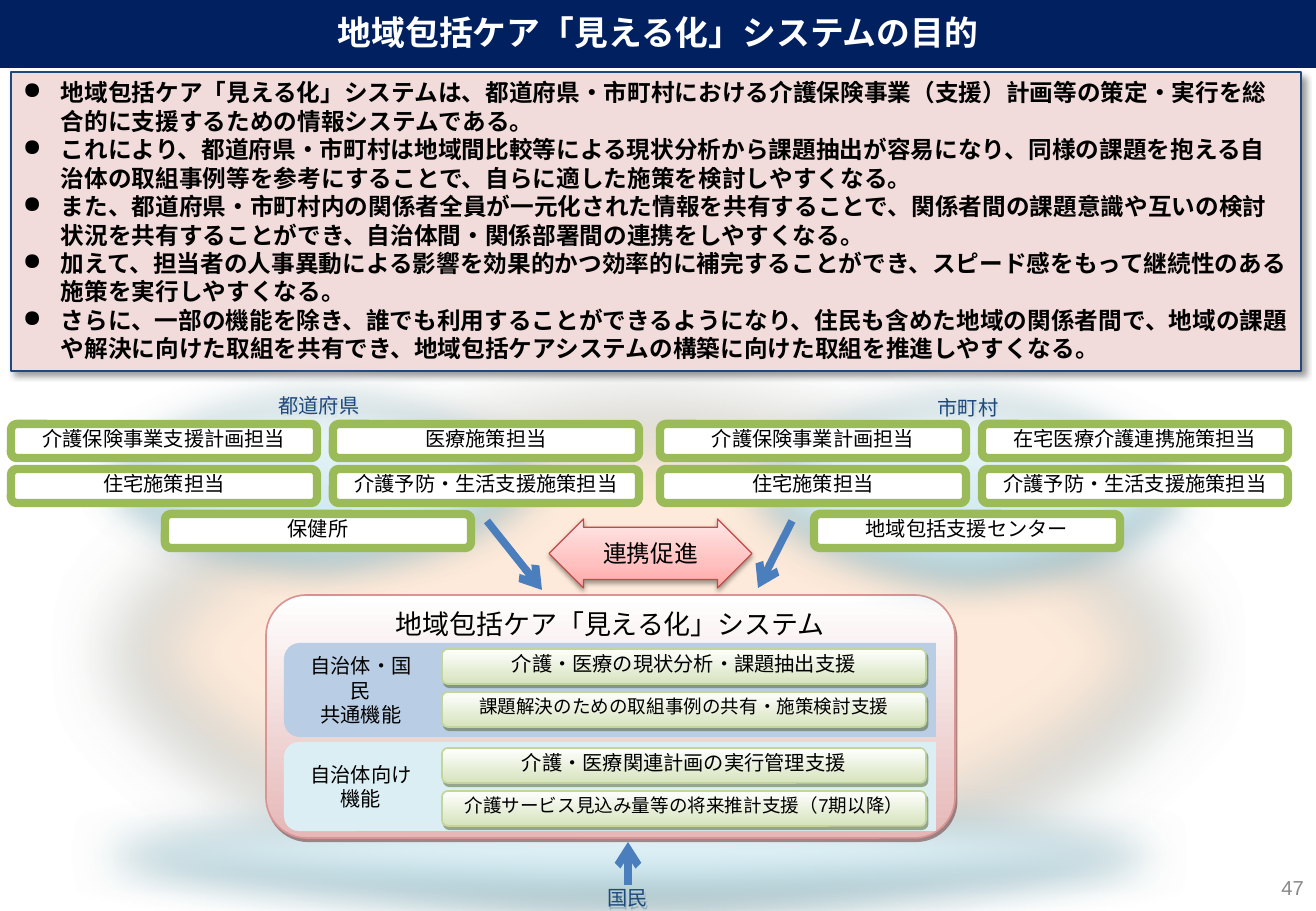
from copy import deepcopy
from lxml import etree
from pptx import Presentation
from pptx import util as u
from pptx.dml.color import RGBColor
from pptx.enum import shapes, text
from pptx.oxml.ns import qn

# Content
TITLE = "地域包括ケア「見える化」システムの目的"
SUMMARY = [
    "地域包括ケア「見える化」システムは、都道府県・市町村における介護保険事業（支援）計画等の策定・実行を総合的に支援するための情報システムである。",
    "これにより、都道府県・市町村は地域間比較等による現状分析から課題抽出が容易になり、同様の課題を抱える自治体の取組事例等を参考にすることで、自らに適した施策を検討しやすくなる。",
    "また、都道府県・市町村内の関係者全員が一元化された情報を共有することで、関係者間の課題意識や互いの検討状況を共有することができ、自治体間・関係部署間の連携をしやすくなる。",
    "加えて、担当者の人事異動による影響を効果的かつ効率的に補完することができ、スピード感をもって継続性のある施策を実行しやすくなる。",
    "さらに、一部の機能を除き、誰でも利用することができるようになり、住民も含めた地域の関係者間で、地域の課題や解決に向けた取組を共有でき、地域包括ケアシステムの構築に向けた取組を推進しやすくなる。",
]
SYSTEM = "地域包括ケア「見える化」システム"
COOPERATION = "連携促進"
CITIZENS = "国民"
PAGE = "47"
# name, left and height of the ellipse, left of the grid, offices row by row
GOVERNMENTS = [
    ("都道府県", 56, 245, 11,
     ["介護保険事業支援計画担当", "医療施策担当", "住宅施策担当",
      "介護予防・生活支援施策担当", "保健所"]),
    ("市町村", 705, 260, 660,
     ["介護保険事業計画担当", "在宅医療介護連携施策担当", "住宅施策担当",
      "介護予防・生活支援施策担当", "地域包括支援センター"]),
]
BLUE = RGBColor(0xB9, 0xCD, 0xE5)
AQUA = RGBColor(0xDB, 0xEE, 0xF4)
# label lines, top, height, colour, functions
FUNCTION_GROUPS = [
    (["自治体・国民", "共通機能"], 643, 94, BLUE,
     [("介護・医療の現状分析・課題抽出支援", 12),
      ("課題解決のための取組事例の共有・施策検討支援", 11)]),
    (["自治体向け", "機能"], 742, 89, AQUA,
     [("介護・医療関連計画の実行管理支援", 12),
      ("介護サービス見込み量等の将来推計支援（7期以降）", 11)]),
]
ARROWS = [(487, 521, 542, 590), (792, 521, 758, 588), (628, 885, 628, 842)]

# Colours, fonts and formats
WHITE = RGBColor(0xFF, 0xFF, 0xFF)
BLACK = RGBColor(0, 0, 0)
GREY = RGBColor(0x89, 0x89, 0x89)
NAVY = RGBColor(0x00, 0x20, 0x60)
INK = RGBColor(0x1F, 0x49, 0x7D)
PINK = RGBColor(0xF2, 0xDC, 0xDB)
PEACH = RGBColor(0xFD, 0xEA, 0xDA)
SKY = RGBColor(0xB6, 0xDD, 0xE8)
SKY_LINE = RGBColor(0x92, 0xCD, 0xDC)
ROSE = RGBColor(0xE5, 0xB8, 0xB7)
ROSE_LINE = RGBColor(0xD9, 0x95, 0x94)
LEAF = RGBColor(0xD6, 0xE3, 0xBC)
LEAF_LINE = RGBColor(0xC2, 0xD6, 0x9B)
GREEN = RGBColor(0x9B, 0xBB, 0x59)
ARROW = RGBColor(0x4B, 0x7E, 0xBC)
RED_LINE = RGBColor(0xBF, 0x4C, 0x48)
RED_STOPS = [(0, RGBColor(0xFF, 0xA6, 0xA5)), (0.35, RGBColor(0xFF, 0xC0, 0xBF)),
             (1, RGBColor(0xFF, 0xE7, 0xE7))]
JP = "Noto Sans CJK JP"
SMALL = (10, 1)
WIDE = (12, 6)
S, A, V = shapes.MSO_SHAPE, text.PP_ALIGN, text.MSO_ANCHOR


def fade(color):
    return [(0, WHITE), (1, color)]


def drop(color):
    return (color, 50, 0, 2.2, 63)


CLOUD = dict(line=(SKY_LINE, 1), shadow=drop("205867"))
CLOUD_TEXT = dict(size=12, color=INK, ins=SMALL)

PX = 914400 / 121.5
prs = Presentation()
prs.slide_width, prs.slide_height = round(1316 * PX), round(911 * PX)
slide = prs.slides.add_slide(prs.slide_layouts[6])


def emu(*lengths):
    return [round(n * PX) for n in lengths]


def add_effects(spPr, shadow, soft):
    effects = spPr.find(qn("a:effectLst"))
    if shadow:
        color, alpha, blur, dist, angle = shadow
        outer = etree.SubElement(effects, qn("a:outerShdw"), blurRad=str(u.Pt(blur)),
                                 dist=str(u.Pt(dist)), dir=str(angle * 60000),
                                 algn="ctr", rotWithShape="0")
        clr = etree.SubElement(outer, qn("a:srgbClr"), val=color)
        etree.SubElement(clr, qn("a:alpha"), val=str(alpha * 1000))
    if soft:
        etree.SubElement(effects, qn("a:softEdge"), rad=str(u.Pt(soft)))


def add_box(kind, at, fill, line=None, shadow=None, soft=0, adj=(), angle=270):
    sp = slide.shapes.add_shape(kind, *emu(*at))
    sp.shadow.inherit = False
    for i, value in enumerate(adj):
        sp.adjustments[i] = value
    if isinstance(fill, list):
        sp.fill.gradient()
        sp.fill.gradient_angle = angle
        stops = sp._element.spPr.find(".//" + qn("a:gsLst"))
        for _ in fill[2:]:
            stops.append(deepcopy(stops[0]))
        for stop, (position, color) in zip(sp.fill.gradient_stops, fill):
            stop.position, stop.color.rgb = position, color
    else:
        sp.fill.solid()
        sp.fill.fore_color.rgb = fill
    if line:
        sp.line.color.rgb, sp.line.width = line[0], u.Pt(line[1])
    else:
        sp.line.fill.background()
    add_effects(sp._element.spPr, shadow, soft)
    return sp


def write(sp, lines, size, color=BLACK, font=JP, bold=False, align=A.CENTER,
          anchor=V.TOP, ins=WIDE, bullet=None):
    tf = sp.text_frame
    dx, dy = emu(*ins)
    frame = dict(word_wrap=True, vertical_anchor=anchor, margin_left=dx,
                 margin_right=dx, margin_top=dy, margin_bottom=dy)
    for name, value in frame.items():
        setattr(tf, name, value)
    for i, line in enumerate(lines):
        p = tf.add_paragraph() if i else tf.paragraphs[0]
        p.alignment, p.line_spacing = align, u.Pt(round(size * 1.205, 2))
        r = p.add_run()
        r.text = line
        for name, value in dict(size=u.Pt(size), name=font, bold=bold).items():
            setattr(r.font, name, value)
        r.font.color.rgb = color
        r.font._element.find(qn("a:latin")).addnext(
            r.font._element.makeelement(qn("a:ea"), {"typeface": JP}))
        if bullet:
            pPr = p._p.get_or_add_pPr()
            indent = emu(38)[0]
            pPr.set("marL", str(indent))
            pPr.set("indent", str(-indent))
            etree.SubElement(pPr, qn("a:buChar"), char=bullet)


# Soft background and citizens
add_box(S.OVAL, (18, 332, 1260, 638), PEACH, soft=50, **CLOUD)
sp = add_box(S.OVAL, (-15, 767, 1285, 168), fade(SKY), soft=25, **CLOUD)
write(sp, [CITIZENS], anchor=V.BOTTOM, **CLOUD_TEXT)

# Title and summary
sp = add_box(S.RECTANGLE, (0, -4, 1316, 72), NAVY)
write(sp, [TITLE], 20, WHITE, bold=True, anchor=V.MIDDLE)
sp = add_box(S.RECTANGLE, (11, 72, 1290, 299), PINK, (INK, 0.75), ("000000", 40, 4, 3, 45))
write(sp, SUMMARY, 14, bold=True, align=A.LEFT, bullet="●")

# System and its functions
sp = add_box(S.ROUNDED_RECTANGLE, (266, 595, 689, 243), fade(ROSE), (ROSE_LINE, 1),
             drop("622423"), adj=[0.167])
write(sp, [SYSTEM], 16, font="Arial", ins=SMALL)
for label, top, height, color, functions in FUNCTION_GROUPS:
    add_box(S.RECTANGLE, (424, top, 512, height), color)
    sp = add_box(S.ROUNDED_RECTANGLE, (284, top, 154, height), color)
    write(sp, label, 12, font="Calibri", anchor=V.MIDDLE)
    for row, (name, size) in enumerate(functions):
        sp = add_box(S.ROUNDED_RECTANGLE, (442, top + 6 + 43 * row, 484, 35), fade(LEAF),
                     (LEAF_LINE, 1), drop("4E6128"), adj=[0.167])
        write(sp, [name], size, font="Arial", ins=SMALL)

# Governments and their offices: two columns, the last office centred below
for government, left, height, grid_left, offices in GOVERNMENTS:
    sp = add_box(S.OVAL, (left, 356, 526, height), fade(SKY), soft=25, **CLOUD)
    write(sp, [government], **CLOUD_TEXT)
    for i, office in enumerate(offices):
        row, col = divmod(i, 2)
        x = grid_left + (154 if row == 2 else 322 * col)
        sp = add_box(S.ROUNDED_RECTANGLE, (x, 424 + 45 * row, 306, 34), WHITE,
                     (GREEN, 5), adj=[0.167])
        write(sp, [office], 12, font="Arial", ins=SMALL)

# Arrows into the system
for ends in ARROWS:
    line = slide.shapes.add_connector(shapes.MSO_CONNECTOR.STRAIGHT, *emu(*ends))
    line.line.color.rgb, line.line.width = ARROW, u.Pt(4.5)
    etree.SubElement(line.line._get_or_add_ln(), qn("a:tailEnd"), type="arrow")
    etree.SubElement(line._element.spPr, qn("a:effectLst"))

# Cooperation arrow
sp = add_box(S.LEFT_RIGHT_ARROW, (549, 519, 203, 69), RED_STOPS, (RED_LINE, 0.75),
             ("000000", 38, 3.1, 1.6, 90), adj=[0.76, 0.5], angle=90)
write(sp, [COOPERATION], 14, font="Calibri", anchor=V.MIDDLE)

# Page number
sp = slide.shapes.add_textbox(*emu(1009, 863, 307, 48))
write(sp, [PAGE], 12, GREY, "Arial", align=A.RIGHT, anchor=V.MIDDLE)

prs.save("out.pptx")
